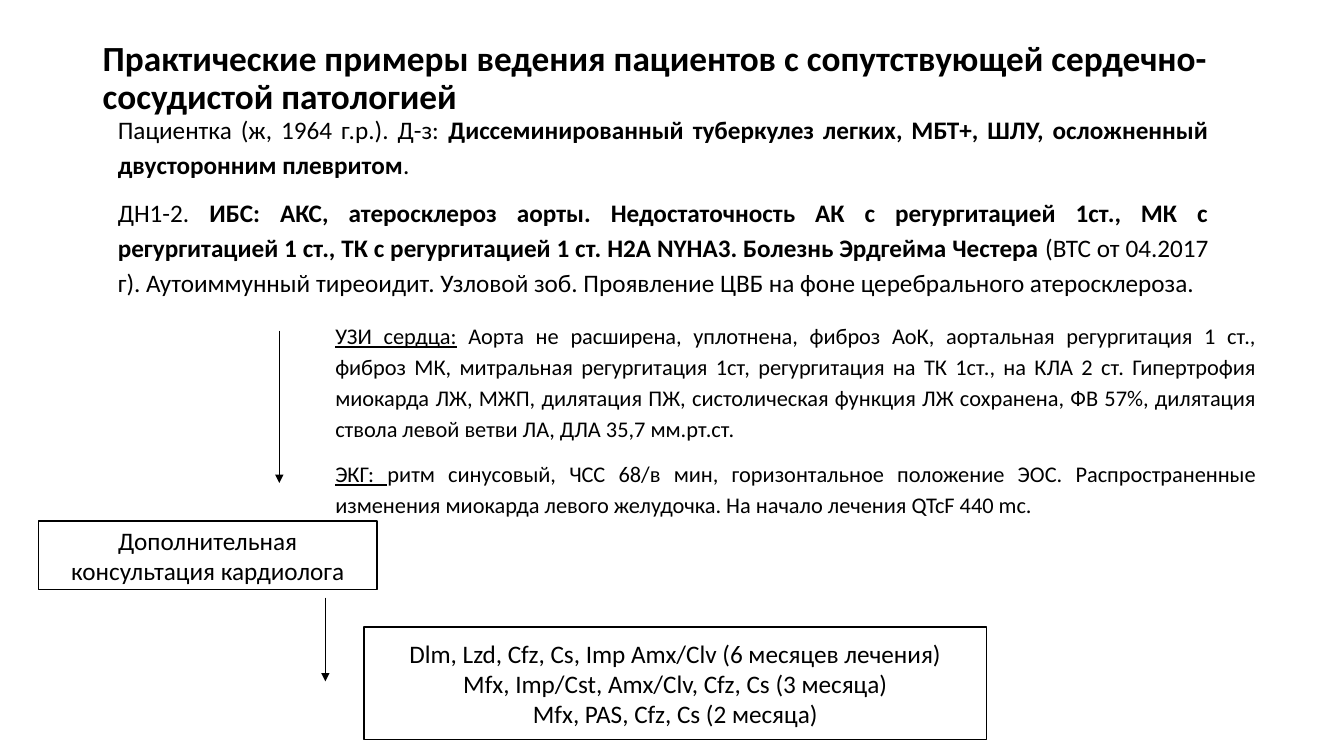
from typing import NamedTuple

from pptx import Presentation
from pptx.dml.color import RGBColor
from pptx.enum.shapes import MSO_CONNECTOR as Connector, MSO_SHAPE as Shape
from pptx.enum.text import MSO_ANCHOR as Anchor, PP_ALIGN as Align
from pptx.oxml.ns import qn
from pptx.util import Cm, Pt
from lxml.etree import SubElement

BLACK = RGBColor(0x00, 0x00, 0x00)
FONT = "Calibri"


class Span(NamedTuple):
    text: str
    bold: bool = False
    underline: bool = False


class TextBlock(NamedTuple):
    left: float
    top: float
    width: float
    height: float
    size: float
    paragraphs: list[list[Span]]
    align: Align = Align.JUSTIFY
    anchor: Anchor = Anchor.TOP
    line_spacing: float = 1.15
    space_after: float = 10
    framed: bool = False


class Arrow(NamedTuple):
    x: float
    top: float
    bottom: float


TITLE = TextBlock(2.34, 1.02, 29.21, 1.96, 25.2, [
    [Span("Практические примеры ведения пациентов с сопутствующей "
          "сердечно-сосудистой патологией", bold=True)],
], align=Align.LEFT, anchor=Anchor.MIDDLE, line_spacing=0.9, space_after=0)

DIAGNOSIS = TextBlock(2.72, 2.64, 27.99, 4.98, 18, [
    [Span("Пациентка (ж, 1964 г.р.). Д-з: "),
     Span("Диссеминированный туберкулез легких, МБТ+, ШЛУ, осложненный "
          "двусторонним плевритом", bold=True),
     Span(". ")],
    [Span("ДН1-2. "),
     Span("ИБС: АКС, атеросклероз аорты. Недостаточность АК с регургитацией "
          "1ст., МК с регургитацией 1 ст., ТК с регургитацией 1 ст. "
          "Н2A NYHA3. Болезнь Эрдгейма Честера", bold=True),
     Span(" (ВТС от 04.2017 г). Аутоиммунный тиреоидит. Узловой зоб. "
          "Проявление ЦВБ на фоне церебрального атеросклероза.")],
])

EXAMINATION = TextBlock(8.2, 7.9, 23.72, 5.28, 16, [
    [Span("УЗИ сердца:", underline=True),
     Span(" Аорта не расширена, уплотнена, фиброз АоК, аортальная "
          "регургитация 1 ст., фиброз МК, митральная регургитация 1ст, "
          "регургитация на ТК 1ст., на КЛА 2 ст. Гипертрофия миокарда ЛЖ, "
          "МЖП, дилятация ПЖ, систолическая функция ЛЖ сохранена, ФВ 57%, "
          "дилятация ствола левой ветви ЛА, ДЛА 35,7 мм.рт.ст.")],
    [Span("ЭКГ: ", underline=True),
     Span("ритм синусовый, ЧСС 68/в мин, горизонтальное положение ЭОС. "
          "Распространенные изменения миокарда левого желудочка. "
          "На начало лечения QTcF 440 mc.")],
])


def framed_block(left: float, top: float, width: float, height: float,
                 lines: list[str]) -> TextBlock:
    return TextBlock(left, top, width, height, 18, [[Span(line)] for line in lines],
                     Align.CENTER, Anchor.MIDDLE, 1.0, 0, framed=True)


CONSULTATION = framed_block(0.97, 13.13, 8.53, 1.73,
                            ["Дополнительная консультация кардиолога"])
TREATMENT = framed_block(9.17, 15.8, 15.7, 2.84, [
    "Dlm, Lzd, Cfz, Cs, Imp Amx/Сlv (6 месяцев лечения)",
    "Mfx, Imp/Cst, Amx/Clv, Cfz, Cs (3 месяца)",
    "Mfx, PAS, Cfz, Cs (2 месяца)",
])

BLOCKS = [TITLE, DIAGNOSIS, EXAMINATION, CONSULTATION, TREATMENT]
ARROWS = [Arrow(7.04, 8.33, 12.17), Arrow(8.2, 15.06, 17.17)]


def draw_block(page, block: TextBlock) -> None:
    bounds = [Cm(length) for length in block[:4]]
    if block.framed:
        box = page.shapes.add_shape(Shape.RECTANGLE, *bounds)
        box.shadow.inherit = False
        box.fill.background()
        box.line.color.rgb = BLACK
        box.line.width = Pt(1)
    else:
        box = page.shapes.add_textbox(*bounds)
    frame = box.text_frame
    frame.word_wrap = True
    frame.vertical_anchor = block.anchor
    for index, spans in enumerate(block.paragraphs):
        para = frame.add_paragraph() if index else frame.paragraphs[0]
        para.alignment = block.align
        para.line_spacing = block.line_spacing
        para.space_after = Pt(block.space_after)
        for span in spans:
            run = para.add_run()
            run.text = span.text
            run.font.name = FONT
            run.font.size = Pt(block.size)
            run.font.color.rgb = BLACK
            run.font.bold = span.bold
            run.font.underline = span.underline


def draw_arrow(page, arrow: Arrow) -> None:
    line = page.shapes.add_connector(Connector.STRAIGHT, Cm(arrow.x), Cm(arrow.top),
                                     Cm(arrow.x), Cm(arrow.bottom))
    line.line.color.rgb = BLACK
    line.line.width = Pt(0.5)
    # Arrowhead at the lower end, no shadow
    SubElement(line.line._get_or_add_ln(), qn("a:tailEnd"), type="triangle")
    SubElement(line._element.spPr, qn("a:effectLst"))


def main() -> None:
    deck = Presentation()
    deck.slide_width, deck.slide_height = Cm(33.87), Cm(19.05)
    page = deck.slides.add_slide(deck.slide_layouts[6])

    # Title, case description and framed steps
    for block in BLOCKS:
        draw_block(page, block)

    # Flow between the steps
    for arrow in ARROWS:
        draw_arrow(page, arrow)

    deck.save("out.pptx")


if __name__ == "__main__":
    main()
